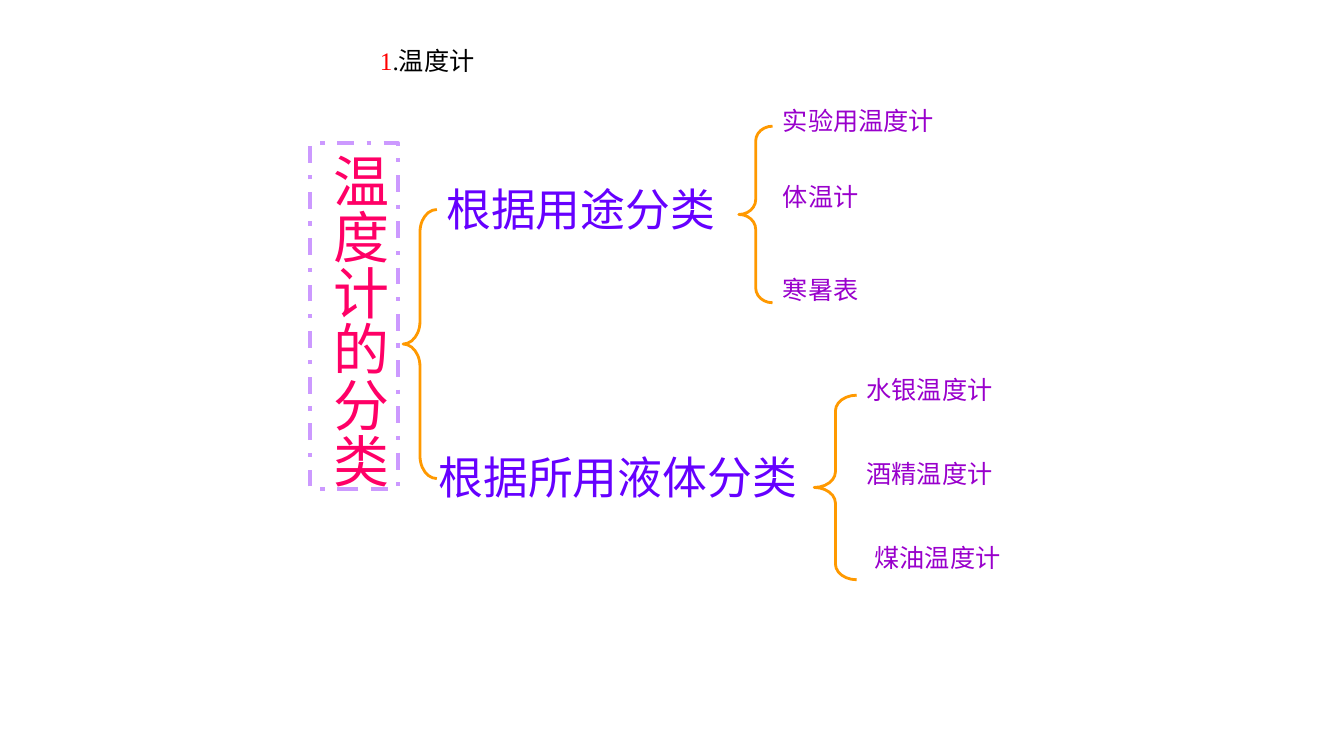
from lxml.etree import SubElement
from pptx import Presentation
from pptx.dml.color import RGBColor
from pptx.enum.dml import MSO_LINE
from pptx.enum.shapes import MSO_SHAPE
from pptx.enum.text import MSO_ANCHOR, MSO_AUTO_SIZE, PP_ALIGN
from pptx.oxml.ns import qn
from pptx.util import Cm, Pt

BLACK = RGBColor(0x00, 0x00, 0x00)
WHITE = RGBColor(0xFF, 0xFF, 0xFF)
RED = RGBColor(0xFF, 0x00, 0x00)
PINK = RGBColor(0xFF, 0x00, 0x66)
LILAC = RGBColor(0xCC, 0x99, 0xFF)
VIOLET = RGBColor(0x66, 0x00, 0xFF)
PURPLE = RGBColor(0x99, 0x00, 0xCC)
ORANGE = RGBColor(0xFF, 0x99, 0x00)


class ThermometerSlide:
    serif = "Times New Roman"
    sans = "Arial"

    def __init__(self, presentation):
        self.slide = presentation.slides.add_slide(presentation.slide_layouts[5])
        self.shapes = self.slide.shapes

    def style(self, run, font, size, color):
        run.font.name = font
        run.font.size = Pt(size)
        run.font.color.rgb = color

    def title(self, number, wording, left, top, width, height):
        heading = self.shapes.title
        heading.left, heading.top = Cm(left), Cm(top)
        heading.width, heading.height = Cm(width), Cm(height)
        frame = heading.text_frame
        frame.vertical_anchor = MSO_ANCHOR.TOP
        frame.auto_size = MSO_AUTO_SIZE.NONE
        paragraph = frame.paragraphs[0]
        paragraph.alignment = PP_ALIGN.LEFT
        for part, color in ((number, RED), (wording, BLACK)):
            run = paragraph.add_run()
            run.text = part
            self.style(run, self.serif, 18, color)

    def label(self, wording, left, top, width, height, font, size, color):
        box = self.shapes.add_textbox(Cm(left), Cm(top), Cm(width), Cm(height))
        frame = box.text_frame
        frame.word_wrap = True
        frame.auto_size = MSO_AUTO_SIZE.SHAPE_TO_FIT_TEXT
        frame.text = wording
        self.style(frame.paragraphs[0].runs[0], font, size, color)

    def category(self, wording, left, top, width):
        self.label(wording, left, top, width, 1.63, self.sans, 32, VIOLET)

    def kind(self, wording, left, top, width):
        self.label(wording, left, top, width, 1.02, self.serif, 18, PURPLE)

    def brace(self, left, top, width, height, curve):
        brace = self.shapes.add_shape(
            MSO_SHAPE.LEFT_BRACE, Cm(left), Cm(top), Cm(width), Cm(height))
        brace.shadow.inherit = False
        brace.adjustments[0] = curve
        brace.fill.background()
        brace.line.color.rgb = ORANGE
        brace.line.width = Pt(2)

    def topic(self, wording, left, top, width, height):
        panel = self.shapes.add_shape(
            MSO_SHAPE.RECTANGLE, Cm(left), Cm(top), Cm(width), Cm(height))
        panel.shadow.inherit = False
        panel.fill.solid()
        panel.fill.fore_color.rgb = WHITE
        tint = panel.fill._xPr.find(qn("a:solidFill"))[0]
        SubElement(tint, qn("a:alpha")).set("val", "54000")
        panel.line.color.rgb = LILAC
        panel.line.width = Pt(3)
        panel.line.dash_style = MSO_LINE.DASH_DOT
        frame = panel.text_frame
        frame.word_wrap = False
        frame.auto_size = MSO_AUTO_SIZE.SHAPE_TO_FIT_TEXT
        frame.vertical_anchor = MSO_ANCHOR.TOP
        frame._txBody.bodyPr.set("vert", "eaVert")
        frame.text = wording
        paragraph = frame.paragraphs[0]
        paragraph.alignment = PP_ALIGN.LEFT
        self.style(paragraph.runs[0], self.serif, 40, PINK)


def main():
    presentation = Presentation()
    presentation.slide_width = Cm(33.87)
    presentation.slide_height = Cm(19.05)
    slide = ThermometerSlide(presentation)

    slide.title("1", ".温度计", 9.32, 1.02, 7.19, 1.02)
    slide.category("根据用途分类", 11, 4.45, 8.46)
    slide.category("根据所用液体分类", 10.8, 11.22, 10.16)
    slide.brace(10.16, 5.28, 0.85, 6.78, 0.67)

    for use, top, width in (
            ("实验用温度计", 2.54, 8.51), ("体温计", 4.45, 4.6), ("寒暑表", 6.78, 4.6)):
        slide.kind(use, 19.48, top, width)
    slide.brace(18.62, 3.18, 0.85, 4.45, 0.44)

    liquids = (("水银温度计", 21.59), ("酒精温度计", 21.59), ("煤油温度计", 21.79))
    for row, (liquid, left) in enumerate(liquids):
        slide.kind(liquid, left, 9.32 + 2.11 * row, 7.19)
    slide.brace(20.52, 9.96, 1.07, 4.65, 0.37)

    slide.topic("温度计的分类", 7.82, 3.61, 2.21, 8.71)
    presentation.save("out.pptx")


if __name__ == "__main__":
    main()
